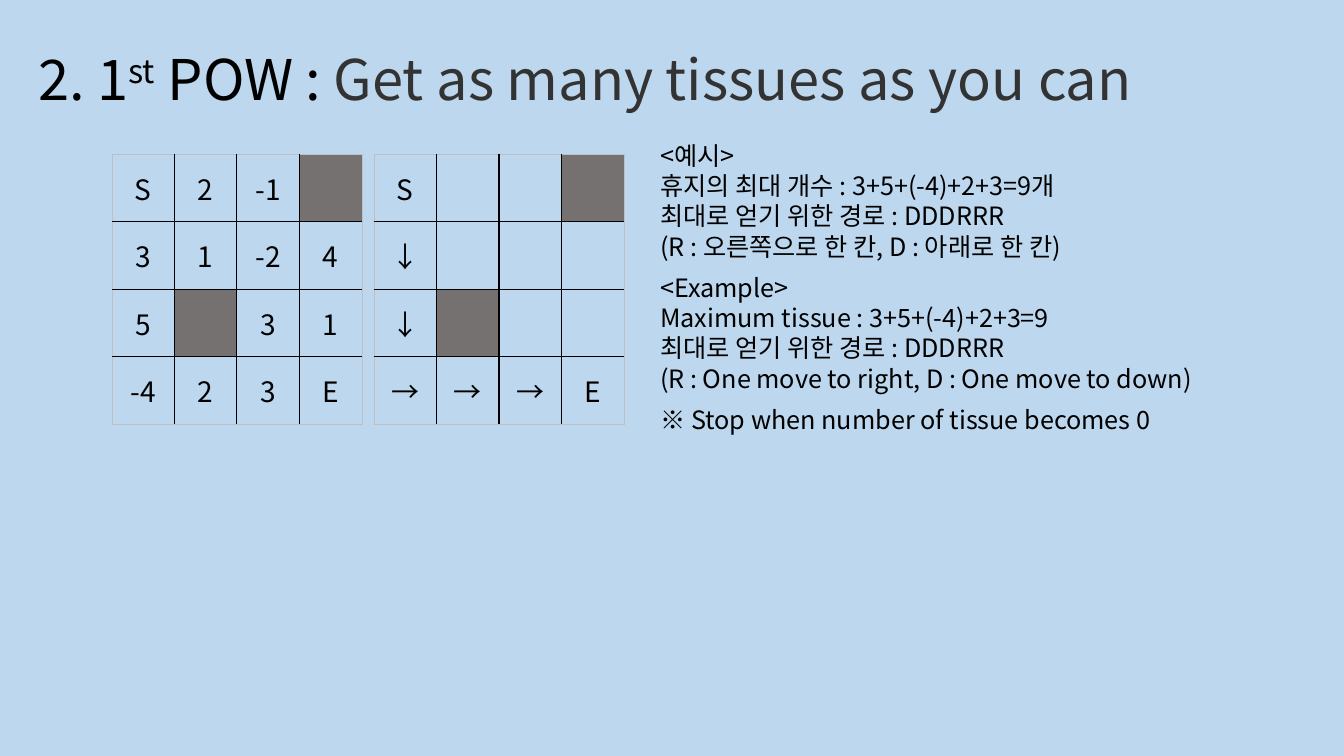
from lxml import etree
from pptx import Presentation
from pptx import util as u
from pptx.dml.color import RGBColor
from pptx.enum import text
from pptx.oxml import ns

BACKGROUND = RGBColor(0xBD, 0xD7, 0xEE)
BLACK = RGBColor(0, 0, 0)
DARK_GRAY = RGBColor(0x33, 0x33, 0x33)
WALL_GRAY = RGBColor(0x76, 0x71, 0x71)
EDGE_GRAY = RGBColor(0xBF, 0xBF, 0xBF)
FONT = "Noto Sans CJK KR"
WALL = "#"


class SlideBuilder:
    """Holds the style and the current slide."""

    def __init__(self, prs):
        self.s = prs.slides.add_slide(prs.slide_layouts[5])
        self.s.background.fill.solid()
        self.s.background.fill.fore_color.rgb = BACKGROUND

    def run(self, p, words, size, color=BLACK, raised=False):
        r = p.add_run()
        r.text = words
        for name, value in {"name": FONT, "size": u.Pt(size)}.items():
            setattr(r.font, name, value)
        r.font.color.rgb = color
        rPr = r._r.get_or_add_rPr()
        etree.SubElement(rPr, ns.qn("a:ea"), typeface=FONT)
        if raised:
            rPr.set("baseline", "30000")

    def frame(self, sp, paragraphs, size):
        """Fill a shape with paragraphs, each a list of run arguments."""
        tf = sp.text_frame
        style = {"word_wrap": True, "auto_size": text.MSO_AUTO_SIZE.NONE,
                 "vertical_anchor": text.MSO_ANCHOR.TOP,
                 "margin_top": u.Inches(0.07)}
        for name, value in style.items():
            setattr(tf, name, value)
        for i, runs in enumerate(paragraphs):
            p = tf.add_paragraph() if i else tf.paragraphs[0]
            p.alignment = text.PP_ALIGN.LEFT
            p.line_spacing = u.Pt(1.2 * size)
            for words, *look in runs:
                self.run(p, words, size, *look)

    def title(self, box, runs, size=40):
        sp = self.s.shapes.title
        for name, value in zip(("left", "top", "width", "height"), box):
            setattr(sp, name, u.Inches(value))
        self.frame(sp, [runs], size)

    def note(self, box, lines, size=18):
        sp = self.s.shapes.add_textbox(*map(u.Inches, box))
        self.frame(sp, [[(line,)] for line in lines], size)

    def border(self, cell, side, outer):
        color, width = (EDGE_GRAY, 0.5) if outer else (BLACK, 1)
        ln = etree.SubElement(cell._tc.get_or_add_tcPr(), ns.qn("a:ln" + side),
                              w=str(u.Pt(width)))
        fill = etree.SubElement(ln, ns.qn("a:solidFill"))
        etree.SubElement(fill, ns.qn("a:srgbClr"), val=str(color))

    def board(self, left, top, grid, col_width=0.62, row_height=0.67):
        rows, cols = len(grid), len(grid[0])
        size = (cols * col_width, rows * row_height)
        table = self.s.shapes.add_table(
            rows, cols, *map(u.Inches, (left, top, *size))).table
        table.first_row = table.horz_banding = False
        for col in table.columns:
            col.width = u.Inches(col_width)
        for row in table.rows:
            row.height = u.Inches(row_height)
        for y, line in enumerate(grid):
            for x, mark in enumerate(line):
                cell = table.cell(y, x)
                outer = {"L": x == 0, "R": x == cols - 1,
                         "T": y == 0, "B": y == rows - 1}
                for side, is_outer in outer.items():
                    self.border(cell, side, is_outer)
                self.square(cell, mark)

    def square(self, cell, mark):
        for side in ("left", "right", "top", "bottom"):
            setattr(cell, "margin_" + side, 0)
        cell.vertical_anchor = text.MSO_ANCHOR.MIDDLE
        if mark == WALL:
            cell.fill.solid()
            cell.fill.fore_color.rgb = WALL_GRAY
            return
        cell.fill.background()
        if mark:
            p = cell.text_frame.paragraphs[0]
            p.alignment = text.PP_ALIGN.CENTER
            self.run(p, mark, 20)


def main():
    prs = Presentation()
    prs.slide_width, prs.slide_height = u.Inches(13.33), u.Inches(7.5)
    slide = SlideBuilder(prs)

    # Title
    slide.title((0.28, 0.37, 11.28, 0.77), [
        ("2. 1",), ("st", BLACK, True), (" POW : ",),
        ("Get as many tissues as you can", DARK_GRAY)])

    # Boards: tissue counts and the best route
    slide.board(1.11, 1.53, [["S", "2", "-1", WALL],
                             ["3", "1", "-2", "4"],
                             ["5", WALL, "3", "1"],
                             ["-4", "2", "3", "E"]])
    slide.board(3.71, 1.53, [["S", "", "", WALL],
                             ["↓", "", "", ""],
                             ["↓", WALL, "", ""],
                             ["→", "→", "→", "E"]])

    # Explanations in Korean and English
    slide.note((6.45, 1.32, 5.7, 1.31), [
        "<예시>",
        "휴지의 최대 개수 : 3+5+(-4)+2+3=9개",
        "최대로 얻기 위한 경로 : DDDRRR",
        "(R : 오른쪽으로 한 칸, D : 아래로 한 칸)"])
    slide.note((6.45, 2.63, 5.7, 1.31), [
        "<Example>",
        "Maximum tissue : 3+5+(-4)+2+3=9",
        "최대로 얻기 위한 경로 : DDDRRR",
        "(R : One move to right, D : One move to down)"])
    slide.note((6.45, 3.94, 6.55, 0.4),
               ["※ Stop when number of tissue becomes 0"])

    prs.save("out.pptx")


if __name__ == "__main__":
    main()
